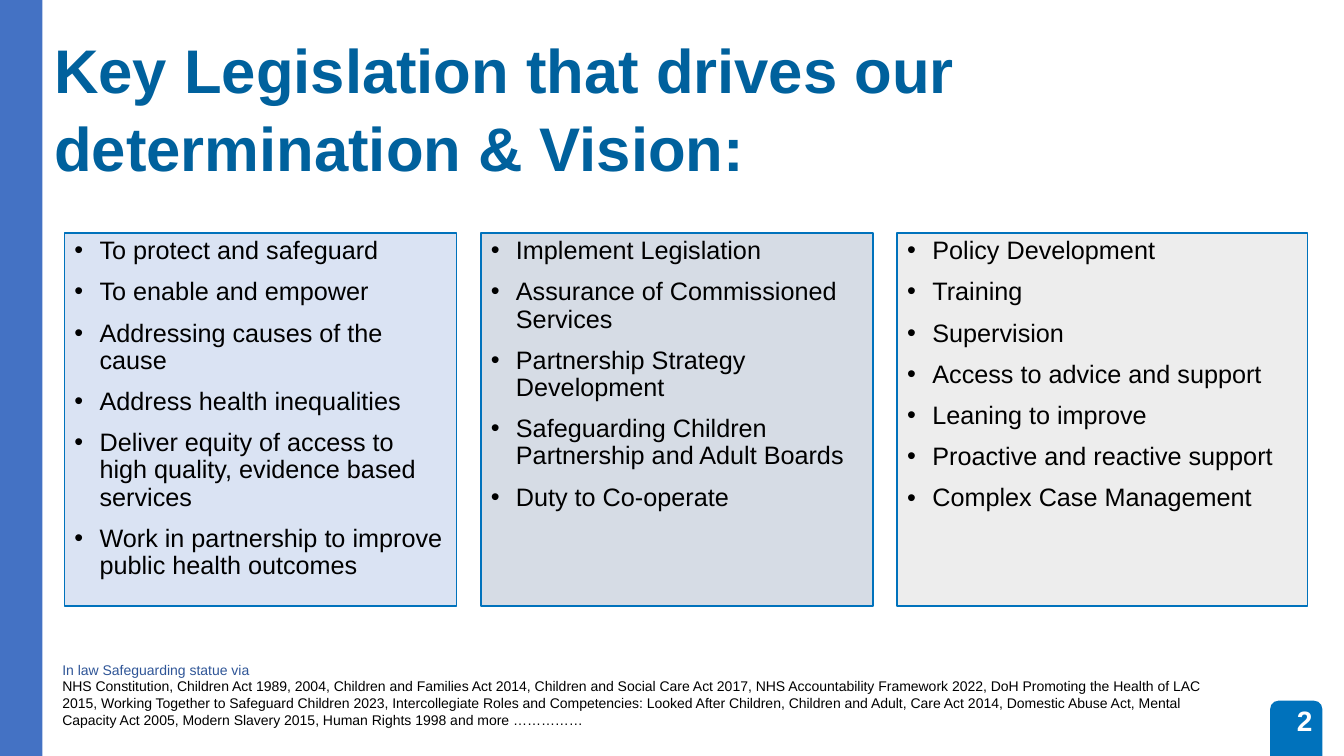
"""Build the slide on key safeguarding legislation."""
from dataclasses import dataclass

from lxml import etree
from pptx import Presentation
from pptx.dml.color import RGBColor
from pptx.enum.shapes import MSO_SHAPE
from pptx.enum.text import MSO_ANCHOR, PP_ALIGN
from pptx.oxml.ns import qn
from pptx.util import Inches, Pt

RECTANGLE = MSO_SHAPE.RECTANGLE
ROUNDED = MSO_SHAPE.ROUNDED_RECTANGLE
TOP, MIDDLE = MSO_ANCHOR.TOP, MSO_ANCHOR.MIDDLE
LEFT, RIGHT = PP_ALIGN.LEFT, PP_ALIGN.RIGHT

WHITE = RGBColor(0xFF, 0xFF, 0xFF)
BLACK = RGBColor(0x00, 0x00, 0x00)
BRIGHT_BLUE = RGBColor(0x00, 0x72, 0xBC)
SIDEBAR_BLUE = RGBColor(0x44, 0x72, 0xC4)
TITLE_BLUE = RGBColor(0x00, 0x61, 0x9D)
NOTE_BLUE = RGBColor(0x2F, 0x55, 0x97)
PALE_BLUE = RGBColor(0xDA, 0xE3, 0xF3)
PALE_SLATE = RGBColor(0xD6, 0xDC, 0xE5)
PALE_GREY = RGBColor(0xED, 0xED, 0xED)

FONT = "Arial"
SLIDE_WIDTH, SLIDE_HEIGHT = Inches(13.33), Inches(7.5)
PANEL_LEFT, PANEL_PITCH = 4.8, 30.98
PANEL_TOP, PANEL_HEIGHT = 30.8, 49.33
BULLET_INDENT = Inches(0.25)


@dataclass(frozen=True)
class Area:
    """Position and size as percentages of the slide."""
    left: float
    top: float
    width: float
    height: float

    def lengths(self) -> tuple[int, int, int, int]:
        """Return left, top, width and height as slide lengths."""
        return (int(SLIDE_WIDTH * self.left / 100), int(SLIDE_HEIGHT * self.top / 100),
                int(SLIDE_WIDTH * self.width / 100), int(SLIDE_HEIGHT * self.height / 100))


@dataclass(frozen=True)
class Line:
    """One paragraph of text with its colour."""
    text: str
    color: RGBColor


@dataclass(frozen=True)
class TextBlock:
    """A text box and its formatting."""
    area: Area
    lines: tuple[Line, ...]
    size: int
    bold: bool = False
    alignment: PP_ALIGN = LEFT
    anchor: MSO_ANCHOR = TOP
    spacing: float = 1.0


@dataclass(frozen=True)
class Panel:
    """A filled column of bullet points."""
    fill: RGBColor
    width: float
    points: tuple[str, ...]


BADGE = Area(94.5, 92.67, 3.9, 10)
SIDEBAR = Area(0, 0, 3.15, 100)

TEXT_BLOCKS = (
    TextBlock(Area(75.9, 92.67, 22.5, 5.33), (Line("2", WHITE),), 20, True, RIGHT, MIDDLE),
    TextBlock(Area(3.3, 3.1, 94.5, 21),
              (Line("Key Legislation that drives our", TITLE_BLUE),
               Line("determination & Vision:", TITLE_BLUE)), 44, True, spacing=1.05),
    TextBlock(Area(3.9, 86.8, 87.55, 10.27),
              (Line("In law Safeguarding statue via", NOTE_BLUE),
               Line("NHS Constitution, Children Act 1989, 2004, Children and Families Act 2014, "
                    "Children and Social Care Act 2017, NHS Accountability Framework 2022, "
                    "DoH Promoting the Health of LAC 2015, Working Together to Safeguard "
                    "Children 2023, Intercollegiate Roles and Competencies: Looked After "
                    "Children, Children and Adult, Care Act 2014, Domestic Abuse Act, Mental "
                    "Capacity Act 2005, Modern Slavery 2015, Human Rights 1998 and more "
                    "……………", BLACK)), 10),
)

PANELS = (
    Panel(PALE_BLUE, 29.18, (
        "To protect and safeguard", "To enable and empower",
        "Addressing causes of the cause", "Address health inequalities",
        "Deliver equity of access to high quality, evidence based services",
        "Work in partnership to improve public health outcomes")),
    Panel(PALE_SLATE, 29.18, (
        "Implement Legislation", "Assurance of Commissioned Services",
        "Partnership Strategy Development",
        "Safeguarding Children Partnership and Adult Boards", "Duty to Co-operate")),
    Panel(PALE_GREY, 30.53, (
        "Policy Development", "Training", "Supervision", "Access to advice and support",
        "Leaning to improve", "Proactive and reactive support", "Complex Case Management")),
)


def add_block(slide, kind: MSO_SHAPE, area: Area, fill: RGBColor):
    """Add a plain filled shape without a line."""
    shape = slide.shapes.add_shape(kind, *area.lengths())
    shape.shadow.inherit = False
    shape.fill.solid()
    shape.fill.fore_color.rgb = fill
    shape.line.fill.background()
    return shape


def add_run(paragraph, text: str, size: int, color: RGBColor, bold: bool = False) -> None:
    """Add one formatted run to a paragraph."""
    run = paragraph.add_run()
    run.text = text
    run.font.name = FONT
    run.font.size = Pt(size)
    run.font.bold = bold
    run.font.color.rgb = color


def next_paragraph(frame, index: int):
    """Return the first paragraph of a frame or a new one."""
    return frame.add_paragraph() if index else frame.paragraphs[0]


def add_bullet(paragraph) -> None:
    """Give a paragraph a hanging bullet."""
    properties = paragraph._p.get_or_add_pPr()
    properties.set("marL", str(BULLET_INDENT))
    properties.set("indent", str(-BULLET_INDENT))
    etree.SubElement(properties, qn("a:buFont"), typeface=FONT)
    etree.SubElement(properties, qn("a:buChar"), char="•")


def add_text(slide, block: TextBlock) -> None:
    """Add a text box with one run per paragraph."""
    frame = slide.shapes.add_textbox(*block.area.lengths()).text_frame
    frame.word_wrap = True
    frame.vertical_anchor = block.anchor
    for index, line in enumerate(block.lines):
        paragraph = next_paragraph(frame, index)
        paragraph.alignment = block.alignment
        paragraph.line_spacing = block.spacing
        add_run(paragraph, line.text, block.size, line.color, block.bold)


def add_panel(slide, panel: Panel, column: int) -> None:
    """Add an outlined panel with its bullet points."""
    area = Area(PANEL_LEFT + column * PANEL_PITCH, PANEL_TOP, panel.width, PANEL_HEIGHT)
    shape = add_block(slide, RECTANGLE, area, panel.fill)
    shape.line.color.rgb = BRIGHT_BLUE
    shape.line.width = Pt(1.25)
    frame = shape.text_frame
    frame.word_wrap = True
    frame.vertical_anchor = TOP
    for index, point in enumerate(panel.points):
        paragraph = next_paragraph(frame, index)
        add_bullet(paragraph)
        paragraph.alignment = LEFT
        paragraph.line_spacing = 0.9
        paragraph.space_before = Pt(10 if index else 0)
        add_run(paragraph, point, 18, BLACK)


def main() -> None:
    """Build and save the presentation."""
    presentation = Presentation()
    presentation.slide_width, presentation.slide_height = SLIDE_WIDTH, SLIDE_HEIGHT
    slide = presentation.slides.add_slide(presentation.slide_layouts[6])
    add_block(slide, ROUNDED, BADGE, BRIGHT_BLUE)
    add_block(slide, RECTANGLE, SIDEBAR, SIDEBAR_BLUE)
    for block in TEXT_BLOCKS:
        add_text(slide, block)
    for column, panel in enumerate(PANELS):
        add_panel(slide, panel, column)
    presentation.save("out.pptx")


if __name__ == "__main__":
    main()
